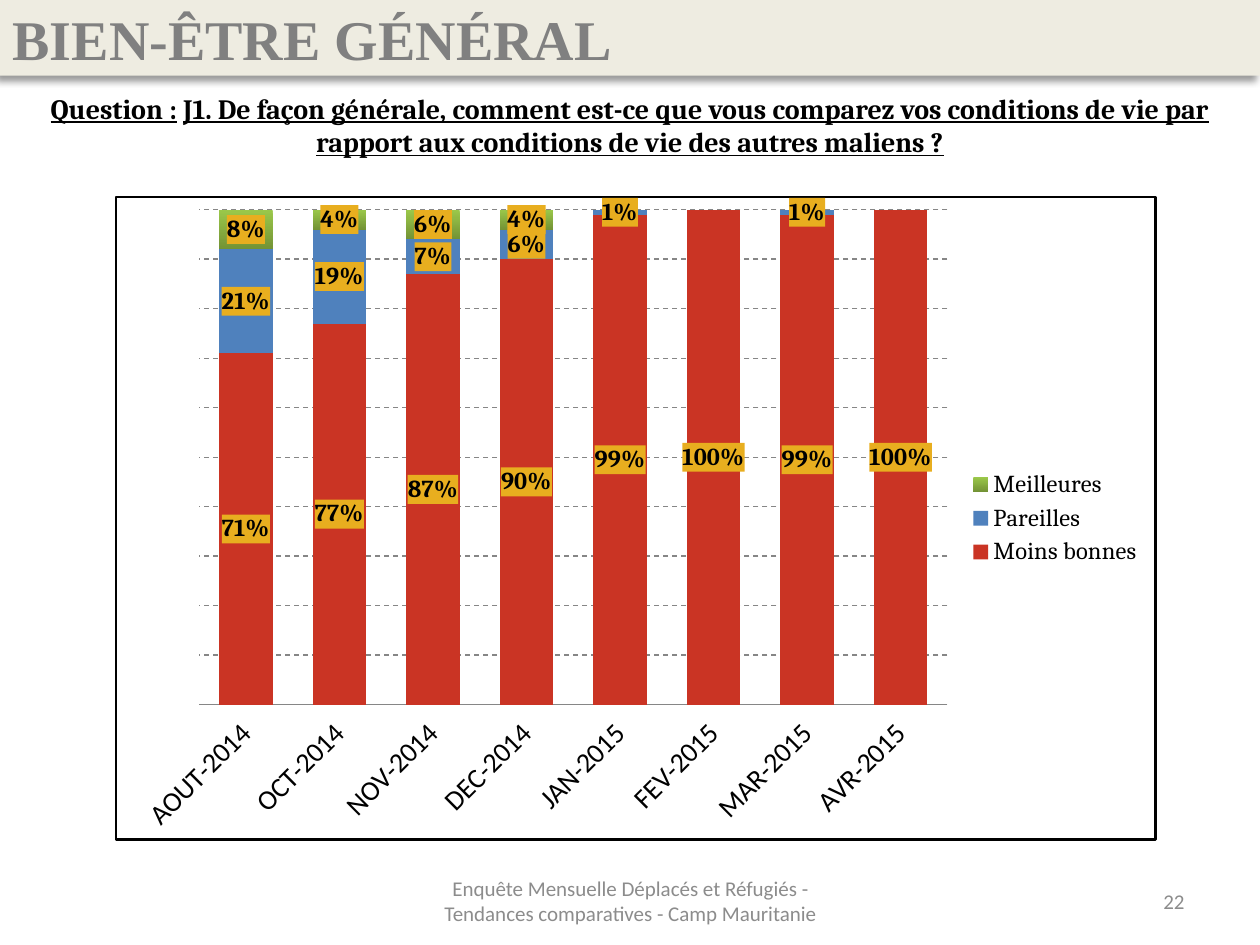
from dataclasses import dataclass

from pptx import Presentation
from pptx.chart.data import CategoryChartData
from pptx.dml.color import RGBColor
from pptx.enum.chart import XL_CHART_TYPE as ChartType, XL_LEGEND_POSITION as LegendPosition
from pptx.enum.chart import XL_TICK_LABEL_POSITION as LabelPosition, XL_TICK_MARK as TickMark
from pptx.enum.dml import MSO_LINE
from pptx.enum.text import MSO_ANCHOR as Anchor, PP_ALIGN as Align
from pptx.oxml import parse_xml
from pptx.oxml.ns import nsdecls
from pptx.util import Inches, Pt


@dataclass(frozen=True)
class Theme:
    banner: str = "EEECE1"
    heading: str = "808080"
    ink: str = "000000"
    muted: str = "8C8C8C"
    grid: str = "868686"
    label: str = "E8AE1F"
    worse: str = "CA3424"
    same: str = "4F81BD"
    better: tuple = ("9BC84A", "739335")
    heading_font: str = "Times New Roman"
    text_font: str = "Cambria"
    small_font: str = "Calibri"
    heading_size: int = 32
    question_size: int = 16
    axis_size: int = 16
    label_size: int = 14
    footer_size: int = 12
    chart_size: int = 10


THEME = Theme()
WIDTH, HEIGHT = Inches(10), Inches(7.5)
MONTHS = ["AOUT-2014", "OCT-2014", "NOV-2014", "DEC-2014",
          "JAN-2015", "FEV-2015", "MAR-2015", "AVR-2015"]
ANSWERS = [
    ("Moins bonnes", [0.71, 0.77, 0.87, 0.9, 0.99, 1, 0.99, 1], THEME.worse),
    ("Pareilles", [0.21, 0.19, 0.07, 0.06, 0.01, 0, 0.01, 0], THEME.same),
    ("Meilleures", [0.08, 0.04, 0.06, 0.04, 0, 0, 0, 0], THEME.better),
]


def share(left, top, width, height):
    """Turn shares of the slide into a box in slide units."""
    return (int(left * WIDTH), int(top * HEIGHT), int(width * WIDTH), int(height * HEIGHT))


def style(font, size, name, color, bold=False):
    font.size, font.name, font.bold = Pt(size), name, bold
    font.color.rgb = RGBColor.from_string(color)


def add_span(para, text, size, name, color, bold=False, underline=False):
    span = para.add_run()
    span.text = text
    style(span.font, size, name, color, bold)
    span.font.underline = underline


def add_text_box(page, box, align, anchor=Anchor.TOP):
    """Add a wrapping text box and return its first paragraph."""
    frame = page.shapes.add_textbox(*box).text_frame
    frame.word_wrap = True
    frame.vertical_anchor = anchor
    para = frame.paragraphs[0]
    para.alignment = align
    return para


def add_banner(page, box):
    title = page.shapes.title
    title.left, title.top, title.width, title.height = box
    title.fill.solid()
    title.fill.fore_color.rgb = RGBColor.from_string(THEME.banner)
    title.element.spPr.append(parse_xml(
        f'<a:effectLst {nsdecls("a")}><a:outerShdw blurRad="50800" dist="50800" dir="8100000">'
        f'<a:srgbClr val="{THEME.ink}"><a:alpha val="40000"/></a:srgbClr>'
        '</a:outerShdw></a:effectLst>'))
    title.text_frame.vertical_anchor = Anchor.MIDDLE
    para = title.text_frame.paragraphs[0]
    para.alignment = Align.LEFT
    add_span(para, "BIEN-ÊTRE GÉNÉRAL", THEME.heading_size, THEME.heading_font,
             THEME.heading, bold=True)


def add_question(page, box):
    para = add_text_box(page, box, Align.CENTER)
    wording = ("J1. De façon générale, comment est-ce que vous comparez vos conditions de vie "
               "par rapport aux conditions de vie des autres maliens ?")
    for text, underline in (("Question :", True), (" ", False), (wording, True)):
        add_span(para, text, THEME.question_size, THEME.text_font, THEME.ink, True, underline)


def solid_fill(color):
    return f'<a:solidFill><a:srgbClr val="{color}"/></a:solidFill>'


def fill_series(fill, color):
    if isinstance(color, str):
        fill.solid()
        fill.fore_color.rgb = RGBColor.from_string(color)
        return
    fill.gradient()
    fill.gradient_angle = 270
    for stop, shade in zip(fill.gradient_stops, color):
        stop.color.rgb = RGBColor.from_string(shade)


def label_series(series, node, values):
    """Show highlighted percentages, except on empty segments."""
    labels = series.data_labels
    labels.show_value = True
    labels.number_format, labels.number_format_is_linked = "0%", False
    style(labels.font, THEME.label_size, THEME.text_font, THEME.ink, bold=True)
    node.xpath("./c:dLbls/c:numFmt")[0].addnext(parse_xml(
        f'<c:spPr {nsdecls("c", "a")}>{solid_fill(THEME.label)}</c:spPr>'))
    empty = [index for index, value in enumerate(values) if value == 0]
    for index in reversed(empty):
        node.xpath("./c:dLbls")[0].insert(0, parse_xml(
            f'<c:dLbl {nsdecls("c")}><c:idx val="{index}"/><c:delete val="1"/></c:dLbl>'))


def format_axes(chart):
    months, percent = chart.category_axis, chart.value_axis
    months.major_tick_mark = months.minor_tick_mark = TickMark.NONE
    months.tick_label_position = LabelPosition.LOW
    months.format.line.color.rgb = RGBColor.from_string(THEME.grid)
    style(months.tick_labels.font, THEME.axis_size, THEME.small_font, THEME.ink)
    chart.element.xpath(".//c:catAx/c:txPr/a:bodyPr")[0].set("rot", "-2700000")
    percent.minimum_scale, percent.maximum_scale, percent.major_unit = 0, 1, 0.1
    percent.tick_labels.number_format = "0%"
    percent.tick_labels.number_format_is_linked = False
    percent.has_major_gridlines = True
    grid = percent.major_gridlines.format.line
    grid.color.rgb = RGBColor.from_string(THEME.grid)
    grid.width, grid.dash_style = Pt(0.75), MSO_LINE.DASH
    percent.visible = False


def frame_chart(chart):
    """Place the plot area and outline the whole chart."""
    area = chart.element.xpath(".//c:plotArea")[0]
    for layout in area.xpath("./c:layout"):
        area.remove(layout)
    sides = "".join(f'<c:{side} val="{value}"/>' for side, value in
                    (("x", 0.08), ("y", 0.02), ("w", 0.72), ("h", 0.77)))
    area.insert(0, parse_xml(
        f'<c:layout {nsdecls("c")}><c:manualLayout><c:layoutTarget val="inner"/>'
        f'<c:xMode val="edge"/><c:yMode val="edge"/>{sides}</c:manualLayout></c:layout>'))
    chart.element.xpath("./c:chart")[0].addnext(parse_xml(
        f'<c:spPr {nsdecls("c", "a")}><a:noFill/>'
        f'<a:ln w="{Pt(1.5)}">{solid_fill(THEME.ink)}</a:ln></c:spPr>'))


def add_answer_chart(page, box):
    data = CategoryChartData(number_format="0%")
    data.categories = MONTHS
    for name, values, _ in ANSWERS:
        data.add_series(name, values)
    chart = page.shapes.add_chart(ChartType.COLUMN_STACKED_100, *box, data).chart
    chart.has_title = False
    style(chart.font, THEME.chart_size, THEME.small_font, THEME.ink)
    plot = chart.plots[0]
    plot.gap_width, plot.overlap, plot.vary_by_categories = 75, 100, False
    nodes = chart.element.xpath(".//c:ser")
    for series, node, (_, values, color) in zip(plot.series, nodes, ANSWERS):
        fill_series(series.format.fill, color)
        label_series(series, node, values)
    format_axes(chart)
    chart.has_legend = True
    chart.legend.position = LegendPosition.RIGHT
    chart.legend.include_in_layout = False
    style(chart.legend.font, THEME.label_size, THEME.text_font, THEME.ink)
    frame_chart(chart)


def add_footer_text(page, box, text, align):
    para = add_text_box(page, box, align, Anchor.MIDDLE)
    add_span(para, text, THEME.footer_size, THEME.small_font, THEME.muted)


def main():
    deck = Presentation()
    deck.slide_width, deck.slide_height = WIDTH, HEIGHT
    page = deck.slides.add_slide(deck.slide_layouts[5])
    add_banner(page, share(0, 0, 1, 0.08))
    add_question(page, share(0, 0.09, 1, 0.085))
    add_answer_chart(page, share(0.091, 0.207, 0.827, 0.683))
    add_footer_text(page, share(0.342, 0.927, 0.317, 0.053),
                    "Enquête Mensuelle Déplacés et Réfugiés - Tendances comparatives - "
                    "Camp Mauritanie", Align.CENTER)
    add_footer_text(page, share(0.717, 0.927, 0.233, 0.053), "22", Align.RIGHT)
    deck.save("out.pptx")


if __name__ == "__main__":
    main()
